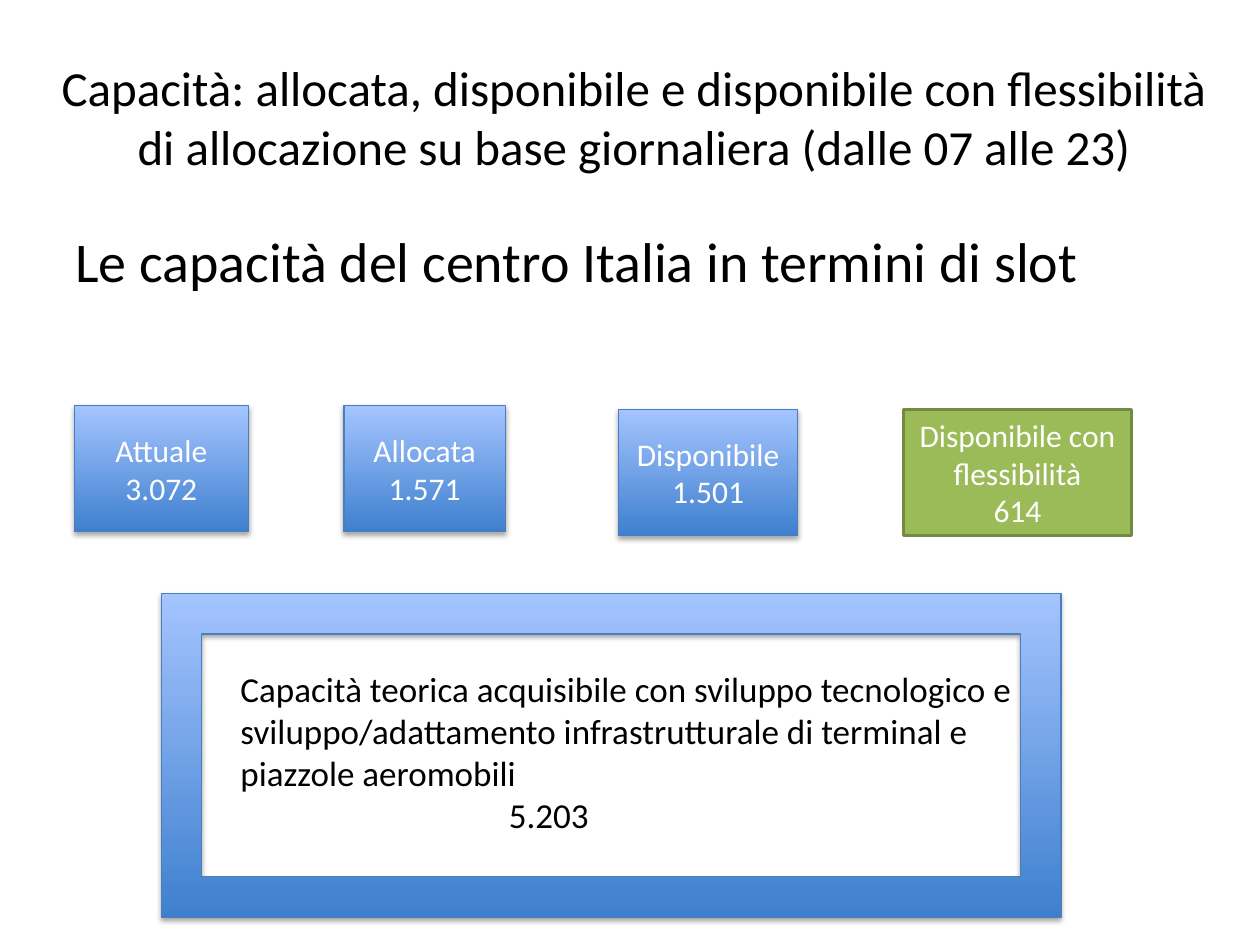
from dataclasses import dataclass

import pptx
import pptx.dml.color
import pptx.enum.shapes
import pptx.enum.text
import pptx.oxml
import pptx.oxml.ns
import pptx.util

Inches = pptx.util.Inches
Pt = pptx.util.Pt
RGBColor = pptx.dml.color.RGBColor
Align = pptx.enum.text.PP_ALIGN
Anchor = pptx.enum.text.MSO_ANCHOR
Kind = pptx.enum.shapes.MSO_SHAPE

BLACK = RGBColor(0x00, 0x00, 0x00)
WHITE = RGBColor(0xFF, 0xFF, 0xFF)
DEEP = RGBColor(0x3F, 0x80, 0xCE)
PALE = RGBColor(0xA4, 0xC4, 0xFF)
EDGE = RGBColor(0x4B, 0x7E, 0xBC)
GREEN = RGBColor(0x9B, 0xBB, 0x59)
OLIVE = RGBColor(0x73, 0x8A, 0x42)

SHADOW = (
    f'<a:outerShdw {pptx.oxml.ns.nsdecls("a")} blurRad="{Pt(3.1)}" '
    f'dist="{Pt(1.8)}" dir="5400000" rotWithShape="0">'
    '<a:srgbClr val="000000"><a:alpha val="35000"/></a:srgbClr></a:outerShdw>'
)


@dataclass
class Box:
    left: float
    top: float
    width: float
    height: float

    def spot(self) -> tuple:
        return tuple(map(Inches, (self.left, self.top, self.width, self.height)))


@dataclass
class Card:
    box: Box
    label: str
    value: str
    green: bool = False


CARDS = [
    Card(Box(0.59, 3.22, 1.38, 1), "Attuale", "3.072"),
    Card(Box(2.73, 3.22, 1.28, 1), "Allocata", "1.571"),
    Card(Box(4.91, 3.25, 1.42, 1), "Disponibile", "1.501"),
    Card(Box(7.17, 3.25, 1.81, 1), "Disponibile con flessibilità", "614", True),
]


def write(shape, *lines: str, size: float, color: RGBColor = BLACK,
          align=Align.LEFT, anchor=Anchor.TOP, wrap: bool = True) -> None:
    """Fill a shape with one paragraph per line."""
    frame = shape.text_frame
    frame.word_wrap = wrap
    frame.vertical_anchor = anchor
    for num, line in enumerate(lines):
        para = frame.add_paragraph() if num else frame.paragraphs[0]
        para.alignment = align
        run = para.add_run()
        run.text = line
        run.font.name = "Calibri"
        run.font.size = Pt(size)
        run.font.color.rgb = color


def draw(slide, kind, box: Box, green: bool = False):
    """Add a flat green shape, or a blue shaded one with a shadow."""
    shape = slide.shapes.add_shape(kind, *box.spot())
    shape.shadow.inherit = False
    if green:
        shape.fill.solid()
        shape.fill.fore_color.rgb = GREEN
    else:
        shape.fill.gradient()
        shape.fill.gradient_angle = 90
        for stop, color in zip(shape.fill.gradient_stops, (DEEP, PALE)):
            stop.color.rgb = color
        glow = shape._element.spPr.find(pptx.oxml.ns.qn("a:effectLst"))
        glow.append(pptx.oxml.parse_xml(SHADOW))
    shape.line.color.rgb = OLIVE if green else EDGE
    shape.line.width = Pt(2 if green else 0.75)
    return shape


def main() -> None:
    deck = pptx.Presentation()
    deck.slide_width, deck.slide_height = Inches(10), Inches(7.5)
    slide = deck.slides.add_slide(deck.slide_layouts[6])
    shapes = slide.shapes

    # Title and subtitle
    title = shapes.add_textbox(*Box(0.25, 0.3, 9.56, 1.25).spot())
    write(title, "Capacità: allocata, disponibile e disponibile con flessibilità "
          "di allocazione su base giornaliera (dalle 07 alle 23)",
          size=28, align=Align.CENTER, anchor=Anchor.MIDDLE)
    lead = shapes.add_textbox(*Box(0.5, 1.75, 9, 4.95).spot())
    write(lead, "Le capacità del centro Italia in termini di slot", size=32)

    # Slot cards
    for card in CARDS:
        shape = draw(slide, Kind.RECTANGLE, card.box, card.green)
        write(shape, card.label, card.value, size=18, color=WHITE,
              align=Align.CENTER, anchor=Anchor.MIDDLE)

    # Framed note, with its figure indented
    draw(slide, Kind.FRAME, Box(1.28, 4.71, 7.14, 2.57))
    note = shapes.add_textbox(*Box(1.81, 5.25, 6.39, 1.45).spot())
    write(note, "Capacità teorica acquisibile con sviluppo tecnologico e",
          "sviluppo/adattamento infrastrutturale di terminal e",
          "piazzole aeromobili", "5.203", size=20, wrap=False)
    last = note.text_frame.paragraphs[-1]
    last._p.get_or_add_pPr().set("marL", str(Inches(2.13)))

    deck.save("out.pptx")


if __name__ == "__main__":
    main()
